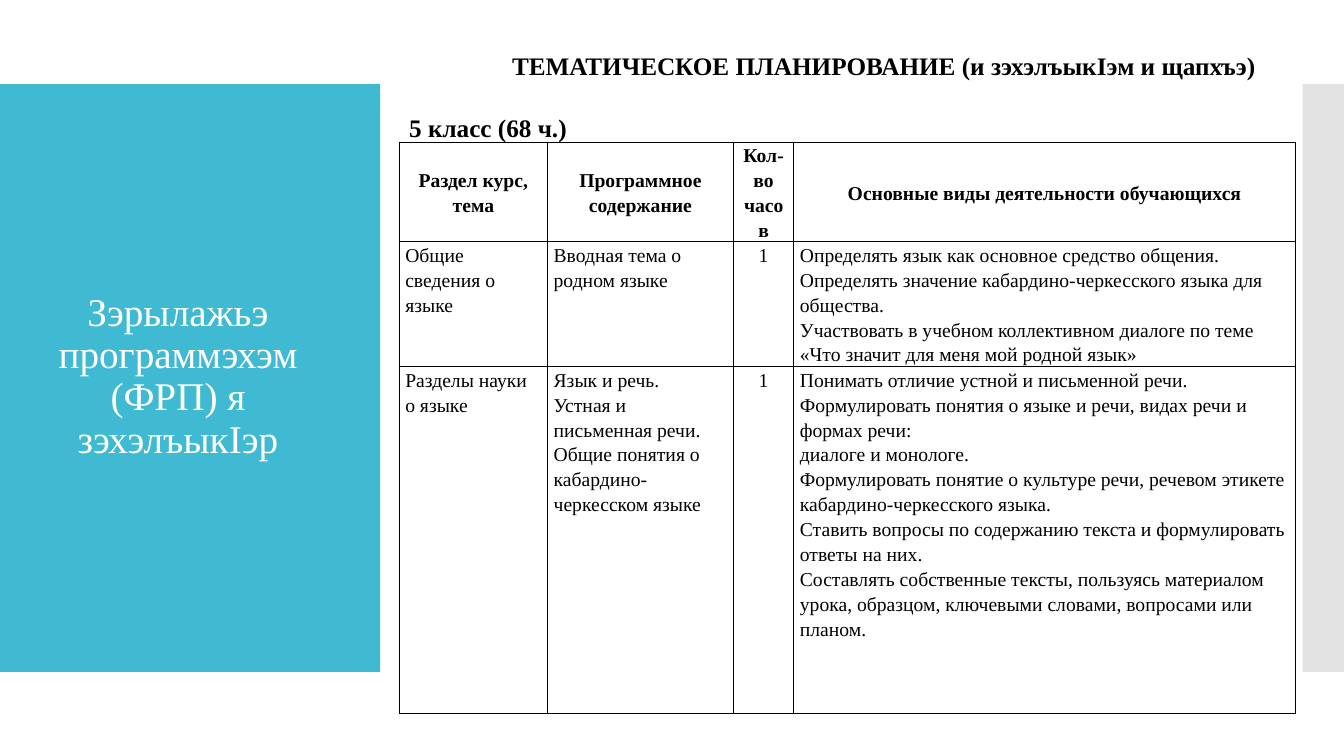
from dataclasses import dataclass

from lxml import etree
from pptx import Presentation
from pptx.dml.color import RGBColor
from pptx.enum.shapes import MSO_SHAPE
from pptx.enum.text import MSO_ANCHOR, MSO_AUTO_SIZE, PP_ALIGN
from pptx.oxml.ns import qn
from pptx.util import Inches, Pt

RECTANGLE = MSO_SHAPE.RECTANGLE
TOP, MIDDLE = MSO_ANCHOR.TOP, MSO_ANCHOR.MIDDLE
LEFT, CENTER = PP_ALIGN.LEFT, PP_ALIGN.CENTER
NO_AUTOFIT = MSO_AUTO_SIZE.NONE
TITLE_ONLY = 5
SLIDE_W, SLIDE_H = 13.33, 7.5


@dataclass(frozen=True)
class Theme:
    font: str = "Times New Roman"
    accent: str = "40BAD2"
    side: str = "C8C8C8"
    light: str = "FFFFFF"
    ink: str = "000000"
    title_size: int = 28
    heading_size: int = 18
    cell_size: int = 14


THEME = Theme()

# Boxes: left, top, width, height in inches
BAND_TOP, BAND_H = SLIDE_H / 9, SLIDE_H * 7 / 9
ACCENT_BOX = (0, BAND_TOP, 3.77, BAND_H)
SIDE_BOX = (12.92, BAND_TOP, SLIDE_W - 12.92, BAND_H)
TITLE_BOX = (0.28, 1.23, 2.97, 5.02)
HEADING_BOX = (3.96, 0.42, 8.89, 1)
PLAN_BOX = (3.96, 1.41, 8.89, 5.66)

COLUMN_SHARES = (1.47, 1.84, 0.6, 4.97)
ROW_SHARES = (0.98, 1.24, 3.44)
HOURS_COLUMN = 2

TITLE = "Зэрылажьэ программэхэм (ФРП) я зэхэлъыкIэр"
HEADING = "ТЕМАТИЧЕСКОЕ ПЛАНИРОВАНИЕ (и зэхэлъыкIэм и щапхъэ)"
CLASS_LINE = "5 класс (68 ч.)"
PLAN = (
    (
        ("Раздел курс, тема",),
        ("Программное содержание",),
        ("Кол-во часов",),
        ("Основные виды деятельности обучающихся",),
    ),
    (
        ("Общие сведения о языке",),
        ("Вводная тема о родном языке",),
        ("1",),
        (
            "Определять язык как основное средство общения.",
            "Определять значение кабардино-черкесского языка для общества.",
            "Участвовать в учебном коллективном диалоге по теме "
            "«Что значит для меня мой родной язык»",
        ),
    ),
    (
        ("Разделы науки о языке",),
        (
            "Язык и речь.",
            "Устная и письменная речи.",
            "Общие понятия о кабардино-черкесском языке",
        ),
        ("1",),
        (
            "Понимать отличие устной и письменной речи.",
            "Формулировать понятия о языке и речи, видах речи и формах речи:",
            "диалоге и монологе.",
            "Формулировать понятие о культуре речи, речевом этикете "
            "кабардино-черкесского языка.",
            "Ставить вопросы по содержанию текста и формулировать ответы на них.",
            "Составлять собственные тексты, пользуясь материалом урока, "
            "образцом, ключевыми словами, вопросами или планом.",
        ),
    ),
)


def inches(box):
    return [Inches(length) for length in box]


def write_lines(frame, lines, size, color, bold=False, align=LEFT, spacing=1.0):
    frame.text = "\n".join(lines)
    for paragraph in frame.paragraphs:
        paragraph.alignment = align
        paragraph.line_spacing = spacing
        font = paragraph.font
        font.name, font.size, font.bold = THEME.font, Pt(size), bold
        font.color.rgb = RGBColor.from_string(color)


def add_panel(slide, box, color, opacity=100):
    panel = slide.shapes.add_shape(RECTANGLE, *inches(box))
    panel.shadow.inherit = False
    panel.line.fill.background()
    panel.fill.solid()
    panel.fill.fore_color.rgb = RGBColor.from_string(color)
    if opacity < 100:
        tint = panel.element.spPr.find(f"{qn('a:solidFill')}/{qn('a:srgbClr')}")
        etree.SubElement(tint, qn("a:alpha"), val=str(opacity * 1000))


def place_title(slide, box):
    title = slide.shapes.title
    title.left, title.top, title.width, title.height = inches(box)
    frame = title.text_frame
    frame.word_wrap, frame.auto_size = True, NO_AUTOFIT
    frame.vertical_anchor = MIDDLE
    write_lines(frame, [TITLE], THEME.title_size, THEME.light,
                align=CENTER, spacing=0.9)
    run = frame.paragraphs[0].runs[0]
    run.font.element.set("spc", "-60") if hasattr(run.font, "element") else \
        title.element.find(f".//{qn('a:r')}/{qn('a:rPr')}") is None and \
        run._r.get_or_add_rPr().set("spc", "-60")
    # Bring the title in front of the panel
    title.element.getparent().append(title.element)


def add_heading(slide, box):
    frame = slide.shapes.add_textbox(*inches(box)).text_frame
    frame.word_wrap = True
    frame.vertical_anchor = TOP
    frame.margin_top = frame.margin_bottom = Inches(0.08)
    write_lines(frame, [HEADING, CLASS_LINE], THEME.heading_size, THEME.ink, bold=True)
    heading, class_line = frame.paragraphs
    heading._p.get_or_add_pPr().set("indent", str(Inches(1.02)))
    class_line.space_before = Pt(23)


def add_borders(cell):
    properties = cell._tc.get_or_add_tcPr()
    for position, side in enumerate(("lnL", "lnR", "lnT", "lnB")):
        line = etree.Element(qn(f"a:{side}"), w=str(Pt(1)))
        fill = etree.SubElement(line, qn("a:solidFill"))
        etree.SubElement(fill, qn("a:srgbClr"), val=THEME.ink)
        properties.insert(position, line)


def fill_cell(cell, lines, is_header, is_centered):
    cell.margin_left = cell.margin_right = Inches(0.06)
    cell.margin_top = cell.margin_bottom = 0
    cell.vertical_anchor = MIDDLE if is_header else TOP
    cell.fill.background()
    write_lines(cell.text_frame, lines, THEME.cell_size, THEME.ink, bold=is_header,
                align=CENTER if is_centered else LEFT, spacing=1.15)
    add_borders(cell)


def add_plan(slide, box):
    width, height = box[2:]
    table = slide.shapes.add_table(len(PLAN), len(COLUMN_SHARES), *inches(box)).table
    table.first_row = table.horz_banding = False
    for column, share in zip(table.columns, COLUMN_SHARES):
        column.width = Inches(width * share / sum(COLUMN_SHARES))
    for row, share in zip(table.rows, ROW_SHARES):
        row.height = Inches(height * share / sum(ROW_SHARES))
    for r, plan_row in enumerate(PLAN):
        for c, lines in enumerate(plan_row):
            fill_cell(table.cell(r, c), lines, r == 0, r == 0 or c == HOURS_COLUMN)


def build_plan_slide(deck):
    slide = deck.slides.add_slide(deck.slide_layouts[TITLE_ONLY])
    add_panel(slide, ACCENT_BOX, THEME.accent)
    add_panel(slide, SIDE_BOX, THEME.side, opacity=50)
    place_title(slide, TITLE_BOX)
    add_plan(slide, PLAN_BOX)
    add_heading(slide, HEADING_BOX)


def main():
    deck = Presentation()
    deck.slide_width, deck.slide_height = Inches(SLIDE_W), Inches(SLIDE_H)
    build_plan_slide(deck)
    deck.save("out.pptx")


if __name__ == "__main__":
    main()
